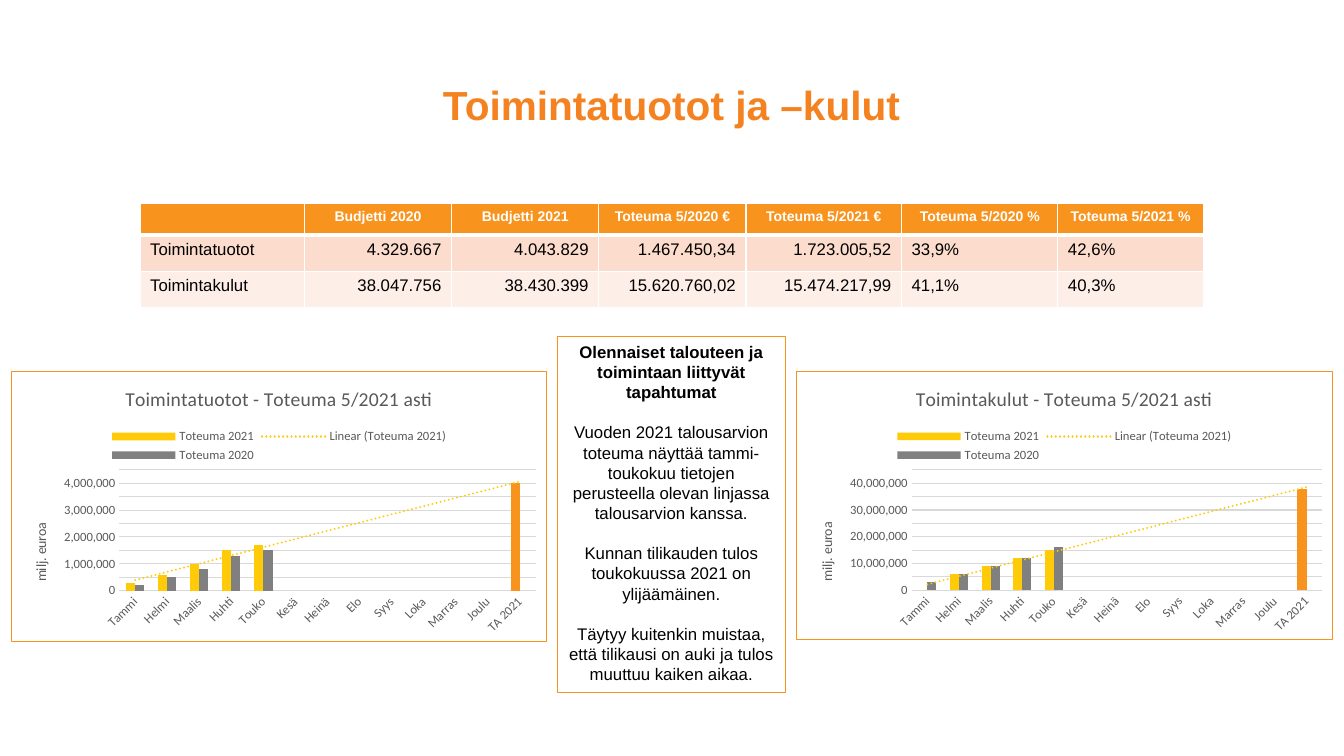
"""Build the slide on operating income and expenses, with a table, two charts and a summary."""
from dataclasses import dataclass

import lxml.etree
import pptx
import pptx.chart.axis
import pptx.chart.chart
import pptx.chart.data
import pptx.dml.color
import pptx.enum.chart
import pptx.enum.dml
import pptx.enum.shapes
import pptx.enum.text
import pptx.oxml
import pptx.oxml.ns
import pptx.slide
import pptx.table
import pptx.text.text
import pptx.util

Cm = pptx.util.Cm
Pt = pptx.util.Pt
qn = pptx.oxml.ns.qn
Align = pptx.enum.text.PP_ALIGN

ORANGE, YELLOW, GREY = "F8931D", "FFCA08", "808080"
LABEL, RULE, WHITE, BLACK = "595959", "D9D9D9", "FFFFFF", "000000"
MONTHS = ["Tammi", "Helmi", "Maalis", "Huhti", "Touko", "Kesä", "Heinä",
          "Elo", "Syys", "Loka", "Marras", "Joulu", "TA 2021"]
COLUMN_WIDTHS = [4.14, 3.71, 3.71, 3.71, 3.92, 3.94, 3.66]
CHART_WIDTH = 13.5


@dataclass
class BudgetRow:
    cells: list[str]
    height: float
    fill: str
    size: float
    color: str
    alignments: list[Align]
    bold: bool = False
    bottom_border: float = 1


@dataclass
class ActualsChart:
    title: str
    left: float
    height: float
    actual_2021: list[int]
    budget_2021: int
    actual_2020: list[int]
    step: int
    plot: tuple[float, float, float, float]


BODY_ALIGNMENTS = [Align.LEFT] + [Align.RIGHT] * 4 + [Align.LEFT] * 2
BUDGET_ROWS = [
    BudgetRow(["", "Budjetti 2020", "Budjetti 2021", "Toteuma 5/2020 €", "Toteuma 5/2021 €",
               "Toteuma 5/2020 %", "Toteuma 5/2021 %"],
              0.8, ORANGE, 10, WHITE, [Align.CENTER] * 7, True, 3),
    BudgetRow(["Toimintatuotot", "4.329.667", "4.043.829", "1.467.450,34", "1.723.005,52",
               "33,9%", "42,6%"], 0.91, "FCDCCD", 12, BLACK, BODY_ALIGNMENTS),
    BudgetRow(["Toimintakulut", "38.047.756", "38.430.399", "15.620.760,02", "15.474.217,99",
               "41,1%", "40,3%"], 0.91, "FEEEE8", 12, BLACK, BODY_ALIGNMENTS),
]
CHARTS = [
    ActualsChart("Toimintatuotot - Toteuma 5/2021 asti", 0.28, 6.81,
                 [300000, 600000, 1000000, 1500000, 1700000], 4000000,
                 [200000, 500000, 800000, 1300000, 1500000], 500000, (2.72, 2.49, 10.51, 3.05)),
    ActualsChart("Toimintakulut - Toteuma 5/2021 asti", 20.07, 6.76,
                 [0, 6000000, 9000000, 12000000, 15000000], 38000000,
                 [3000000, 6000000, 9000000, 12000000, 16000000], 5000000,
                 (2.9, 2.49, 10.36, 3.04)),
]
SUMMARY = [
    "Olennaiset talouteen ja toimintaan liittyvät tapahtumat",
    "Vuoden 2021 talousarvion toteuma näyttää tammi-toukokuu tietojen perusteella "
    "olevan linjassa talousarvion kanssa.",
    "Kunnan tilikauden tulos toukokuussa 2021 on ylijäämäinen.",
    "Täytyy kuitenkin muistaa, että tilikausi on auki ja tulos muuttuu kaiken aikaa.",
]


def rgb(value: str) -> pptx.dml.color.RGBColor:
    return pptx.dml.color.RGBColor.from_string(value)


def style_font(font: pptx.text.text.Font, size: float, color: str,
               bold: bool = False, name: str = "Arial") -> None:
    font.name, font.size, font.bold = name, Pt(size), bold
    font.color.rgb = rgb(color)


def parse_xml(tag: str, content: str) -> lxml.etree._Element:
    return pptx.oxml.parse_xml(
        f"<{tag} {pptx.oxml.ns.nsdecls('a', 'c')}>{content}</{tag}>")


def solid(color: str) -> str:
    return f'<a:solidFill><a:srgbClr val="{color}"/></a:solidFill>'


def add_title(slide: pptx.slide.Slide) -> None:
    title = slide.shapes.title
    title.left, title.top, title.width, title.height = Cm(1.12), Cm(2.1), Cm(31.62), Cm(1.19)
    title.text_frame.text = "Toimintatuotot ja –kulut"
    title.text_frame.vertical_anchor = pptx.enum.text.MSO_ANCHOR.MIDDLE
    heading = title.text_frame.paragraphs[0]
    heading.alignment, heading.line_spacing = Align.CENTER, 0.9
    style_font(heading.runs[0].font, 29, "F58220", True)


def fill_cell(cell: pptx.table._Cell, text: str, row: BudgetRow, alignment: Align) -> None:
    properties = cell._tc.get_or_add_tcPr()
    for side in "LRTB":
        width = Pt(row.bottom_border if side == "B" else 1)
        properties.append(parse_xml(f"a:ln{side}", solid(WHITE)))
        properties[-1].set("w", str(int(width)))
    cell.fill.solid()
    cell.fill.fore_color.rgb = rgb(row.fill)
    cell.text_frame.text = text
    entry = cell.text_frame.paragraphs[0]
    entry.alignment = alignment
    for run in entry.runs:
        style_font(run.font, row.size, row.color, row.bold)
    if not text:
        lxml.etree.SubElement(entry._p, qn("a:endParaRPr")).set("sz", str(int(row.size * 100)))


def add_budget_table(slide: pptx.slide.Slide) -> None:
    budget = slide.shapes.add_table(len(BUDGET_ROWS), len(COLUMN_WIDTHS), Cm(3.53), Cm(5.13),
                                    Cm(sum(COLUMN_WIDTHS)), Cm(2.62)).table
    for column, width in zip(budget.columns, COLUMN_WIDTHS):
        column.width = Cm(width)
    for index, row in enumerate(BUDGET_ROWS):
        budget.rows[index].height = Cm(row.height)
        for cell, text, alignment in zip(budget.rows[index].cells, row.cells, row.alignments):
            fill_cell(cell, text, row, alignment)


def add_summary(slide: pptx.slide.Slide) -> None:
    summary = slide.shapes.add_shape(pptx.enum.shapes.MSO_SHAPE.RECTANGLE,
                                     Cm(14.05), Cm(8.48), Cm(5.74), Cm(8.97))
    summary.shadow.inherit = False
    summary.fill.background()
    summary.line.color.rgb = rgb(ORANGE)
    summary.line.width = Pt(1)
    frame = summary.text_frame
    frame.word_wrap = True
    frame.vertical_anchor = pptx.enum.text.MSO_ANCHOR.TOP
    frame.text = "\n".join(SUMMARY)
    for index, paragraph in enumerate(frame.paragraphs):
        paragraph.alignment = Align.CENTER
        if index:
            paragraph.space_before = Pt(14.4)
        style_font(paragraph.runs[0].font, 12, BLACK, index == 0)


def style_axes(chart: pptx.chart.chart.Chart, step: int) -> None:
    months, euros = chart.category_axis, chart.value_axis
    for axis in (months, euros):
        axis.major_tick_mark = axis.minor_tick_mark = pptx.enum.chart.XL_TICK_MARK.NONE
        style_font(axis.tick_labels.font, 9, LABEL, name="Calibri")
    months.format.line.color.rgb = rgb(RULE)
    months.format.line.width = Pt(0.75)
    months._element.find(qn("c:txPr")).find(qn("a:bodyPr")).set("rot", "-2700000")
    euros.minimum_scale, euros.maximum_scale, euros.major_unit = 0, step * 9, step
    euros.format.line.fill.background()
    euros.major_gridlines.format.line.color.rgb = rgb(RULE)
    euros.major_gridlines.format.line.width = Pt(0.75)
    euros.tick_labels.number_format = "#,##0"
    euros.tick_labels.number_format_is_linked = False
    euros.axis_title.text_frame.text = "milj. euroa"
    style_font(euros.axis_title.text_frame.paragraphs[0].runs[0].font, 10, LABEL, name="Calibri")


def add_actuals_chart(slide: pptx.slide.Slide, actuals: ActualsChart) -> None:
    figures = pptx.chart.data.CategoryChartData(number_format="#,##0")
    figures.categories = MONTHS
    figures.add_series("Toteuma 2021", actuals.actual_2021 + [None] * 7 + [actuals.budget_2021])
    figures.add_series("Toteuma 2020", actuals.actual_2020 + [None] * 8)
    chart = slide.shapes.add_chart(pptx.enum.chart.XL_CHART_TYPE.COLUMN_CLUSTERED,
                                   Cm(actuals.left), Cm(9.35), Cm(CHART_WIDTH),
                                   Cm(actuals.height), figures).chart
    style_font(chart.font, 10, BLACK, name="Calibri")
    chart.chart_title.text_frame.text = actuals.title
    style_font(chart.chart_title.text_frame.paragraphs[0].runs[0].font, 14, LABEL, name="Calibri")
    chart.has_legend = True
    chart.legend.position = pptx.enum.chart.XL_LEGEND_POSITION.TOP
    chart.legend.include_in_layout = False
    style_font(chart.legend.font, 9, LABEL, name="Calibri")
    style_axes(chart, actuals.step)
    columns = chart.plots[0]
    columns.gap_width, columns.overlap, columns.vary_by_categories = 150, 0, False
    for series, color in zip(columns.series, (YELLOW, GREY)):
        series.format.fill.solid()
        series.format.fill.fore_color.rgb = rgb(color)
    current = columns.series[0]
    budget_fill = current.points[len(MONTHS) - 1].format.fill
    budget_fill.solid()
    budget_fill.fore_color.rgb = rgb(ORANGE)
    current._element.find(qn("c:cat")).addprevious(parse_xml(
        "c:trendline", "<c:name>Linear (Toteuma 2021)</c:name>"
        f'<c:spPr><a:ln w="{int(Pt(1.5))}" cap="rnd">{solid(YELLOW)}<a:prstDash val="sysDot"/>'
        '</a:ln></c:spPr><c:trendlineType val="linear"/>'
        '<c:dispRSqr val="0"/><c:dispEq val="0"/>'))
    body = chart.element.find(qn("c:chart"))
    body.addnext(parse_xml(
        "c:spPr", f'<a:noFill/><a:ln w="{int(Pt(0.25))}">{solid(ORANGE)}</a:ln>'))
    area = body.find(qn("c:plotArea"))
    for layout in area.findall(qn("c:layout")):
        area.remove(layout)
    extents = (CHART_WIDTH, actuals.height) * 2
    places = "".join(f'<c:{key} val="{length / extent}"/>'
                     for key, length, extent in zip("xywh", actuals.plot, extents))
    area.insert(0, parse_xml(
        "c:layout", '<c:manualLayout><c:layoutTarget val="inner"/><c:xMode val="edge"/>'
        f'<c:yMode val="edge"/>{places}</c:manualLayout>'))


def main() -> None:
    deck = pptx.Presentation()
    deck.slide_width, deck.slide_height = Cm(33.87), Cm(19.05)
    slide = deck.slides.add_slide(deck.slide_layouts[5])
    add_title(slide)
    add_budget_table(slide)
    add_summary(slide)
    for actuals in CHARTS:
        add_actuals_chart(slide, actuals)
    deck.save("out.pptx")


if __name__ == "__main__":
    main()
